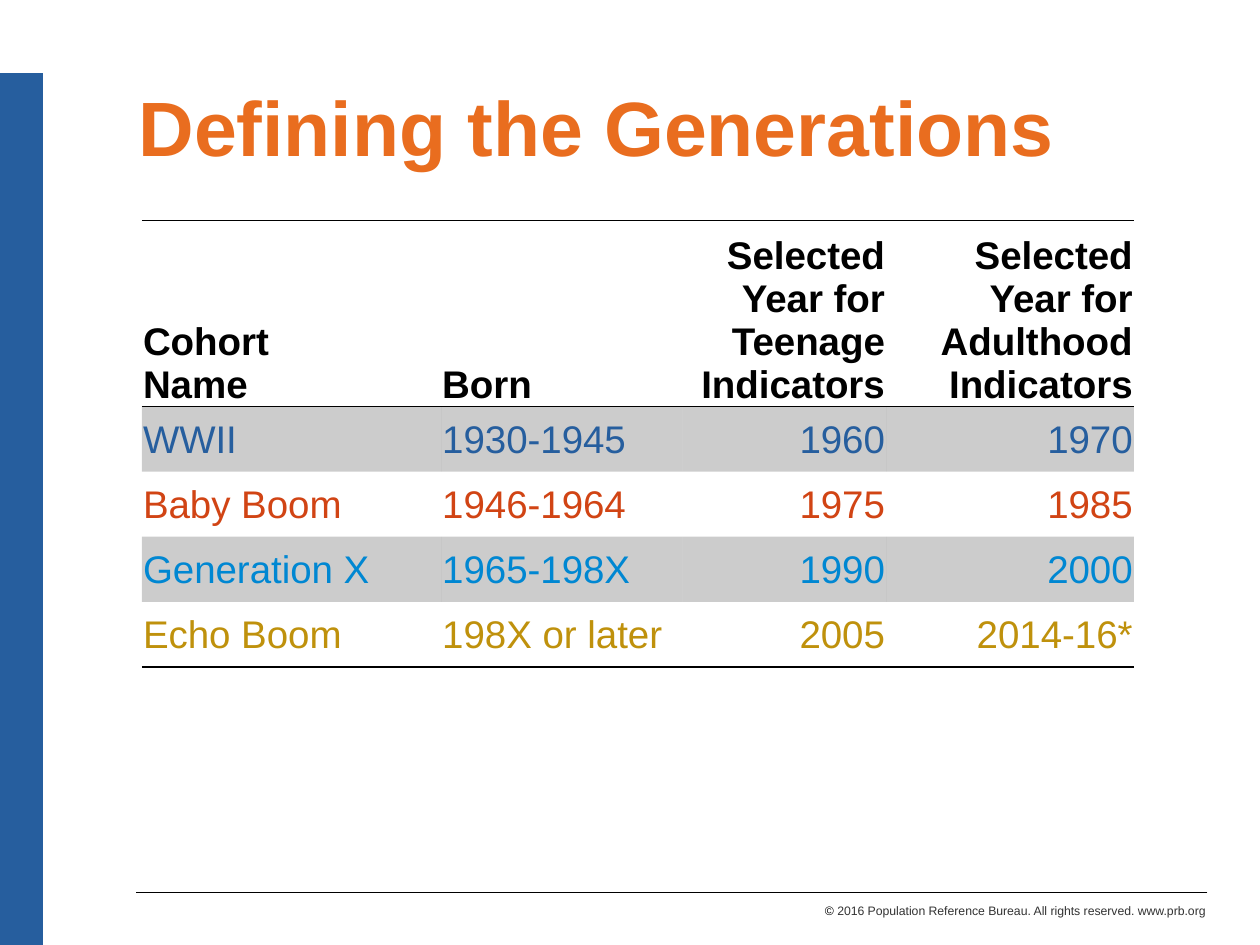
from pptx import Presentation
from pptx.dml.color import RGBColor
from pptx.enum.shapes import MSO_CONNECTOR
from pptx.enum.text import MSO_ANCHOR as Anchor, PP_ALIGN as Align
from pptx.oxml import parse_xml
from pptx.oxml.ns import nsdecls, qn
from pptx.util import Inches, Pt
from lxml.etree import SubElement

COLORS = {"black": "000000", "gray": "333333", "orange": "E96D1F", "blue": "265E9E",
          "red": "D14414", "sky": "0087D2", "gold": "BF910C"}
NO_GRID_STYLE = "{2D5ABB26-0587-4C30-8999-92F81FD0307C}"

HEADER = ["Cohort\nName", "Born", "Selected Year for Teenage Indicators",
          "Selected Year for Adulthood Indicators"]
COHORTS = [
    ("blue", ["WWII", "1930-1945", "1960", "1970"]),
    ("red", ["Baby Boom", "1946-1964", "1975", "1985"]),
    ("sky", ["Generation X", "1965-198X", "1990", "2000"]),
    ("gold", ["Echo Boom", "198X or later", "2005", "2014-16*"]),
]


def grid(n):
    """Length of n grid units, twelve to the inch."""
    return Inches(n / 12)


def rgb(name):
    return RGBColor.from_string(COLORS[name])


class Deck:
    font = "Arial"

    def __init__(self, cols, rows):
        self.prs = Presentation()
        self.prs.slide_width, self.prs.slide_height = grid(cols), grid(rows)
        self.s = self.prs.slides.add_slide(self.prs.slide_layouts[5])

    def style(self, font, size, color, bold=False):
        font.name, font.size, font.bold = self.font, Pt(size), bold
        font.color.rgb = rgb(color)

    def line(self, x1, y1, x2, y2, color, width):
        line = self.s.shapes.add_connector(MSO_CONNECTOR.STRAIGHT, *map(grid, (x1, y1, x2, y2)))
        line.line.color.rgb = rgb(color)
        line.line.width = Pt(width)
        SubElement(line._element.spPr, qn("a:effectLst"))

    def title(self, x, y, w, h, text):
        title = self.s.shapes.title
        title.left, title.top, title.width, title.height = map(grid, (x, y, w, h))
        tf = title.text_frame
        tf.text = text
        tf.vertical_anchor = Anchor.TOP
        tf.margin_top = Inches(0.05)
        p = tf.paragraphs[0]
        p.alignment = Align.LEFT
        self.style(p.font, 44, "orange", True)

    def footer(self, x, y, w, h, runs):
        tf = self.s.shapes.add_textbox(*map(grid, (x, y, w, h))).text_frame
        tf.word_wrap = True
        p = tf.paragraphs[0]
        p.alignment = Align.RIGHT
        for text, color in runs:
            r = p.add_run()
            r.text = text
            self.style(r.font, 7, color)

    def table(self, x, y, widths, height, row_height, header, body):
        rows = [("black", header)] + body
        frame = self.s.shapes.add_table(len(rows), len(widths), grid(x), grid(y),
                                        grid(sum(widths)), grid(height))
        table = frame.table
        table._tbl.tblPr.find(qn("a:tableStyleId")).text = NO_GRID_STYLE
        table.first_row = table.horz_banding = False
        for column, width in zip(table.columns, widths):
            column.width = grid(width)
        for i, (color, texts) in enumerate(rows):
            table.rows[i].height = grid(row_height)
            sides = {0: ["lnT", "lnB"], len(rows) - 1: ["lnB"]}.get(i, [])
            for j, text in enumerate(texts):
                self.cell(table.cell(i, j), text, color, i == 0, j >= 2, sides, i % 2 == 1)
        # The header row grows with its text, so the frame is taller than its rows
        frame.height = grid(height)

    def cell(self, cell, text, color, is_header, is_year, sides, shaded):
        cell.text = text
        cell.margin_left = cell.margin_right = cell.margin_top = Inches(0.01)
        cell.margin_bottom = 0
        cell.vertical_anchor = Anchor.BOTTOM if is_header else Anchor.MIDDLE
        for p in cell.text_frame.paragraphs:
            p.alignment = Align.RIGHT if is_year else Align.LEFT
            self.style(p.font, 22, color, is_header)
        # Borders come before the fill in the cell properties
        tc_pr = cell._tc.get_or_add_tcPr()
        black = COLORS["black"]
        for side in sides:
            tc_pr.append(parse_xml(
                f'<a:{side} {nsdecls("a")} w="{Pt(1)}"><a:solidFill>'
                f'<a:srgbClr val="{black}"/></a:solidFill></a:{side}>'))
        if shaded:
            cell.fill.solid()
            cell.fill.fore_color.rgb = rgb("black")
            SubElement(tc_pr.find(f'.//{qn("a:srgbClr")}'), qn("a:alpha"), val="20000")
        else:
            cell.fill.background()


def main():
    deck = Deck(120, 90)

    # Side bar and footer
    deck.line(2, 7, 2, 90, "blue", 25)
    deck.footer(51, 85.4, 65, 2.6, [
        ("© ", "black"),
        ("2016 Population Reference Bureau. All rights reserved. www.prb.org", "gray")])
    deck.line(115, 85, 13, 85, "black", 0.5)

    # Title and table of generations
    deck.title(12, 7, 96, 9, "Defining the Generations")
    deck.table(13.5, 21, [28.5, 23, 19.4, 23.6], 42.5, 6.2, HEADER, COHORTS)

    deck.prs.save("out.pptx")


if __name__ == "__main__":
    main()
